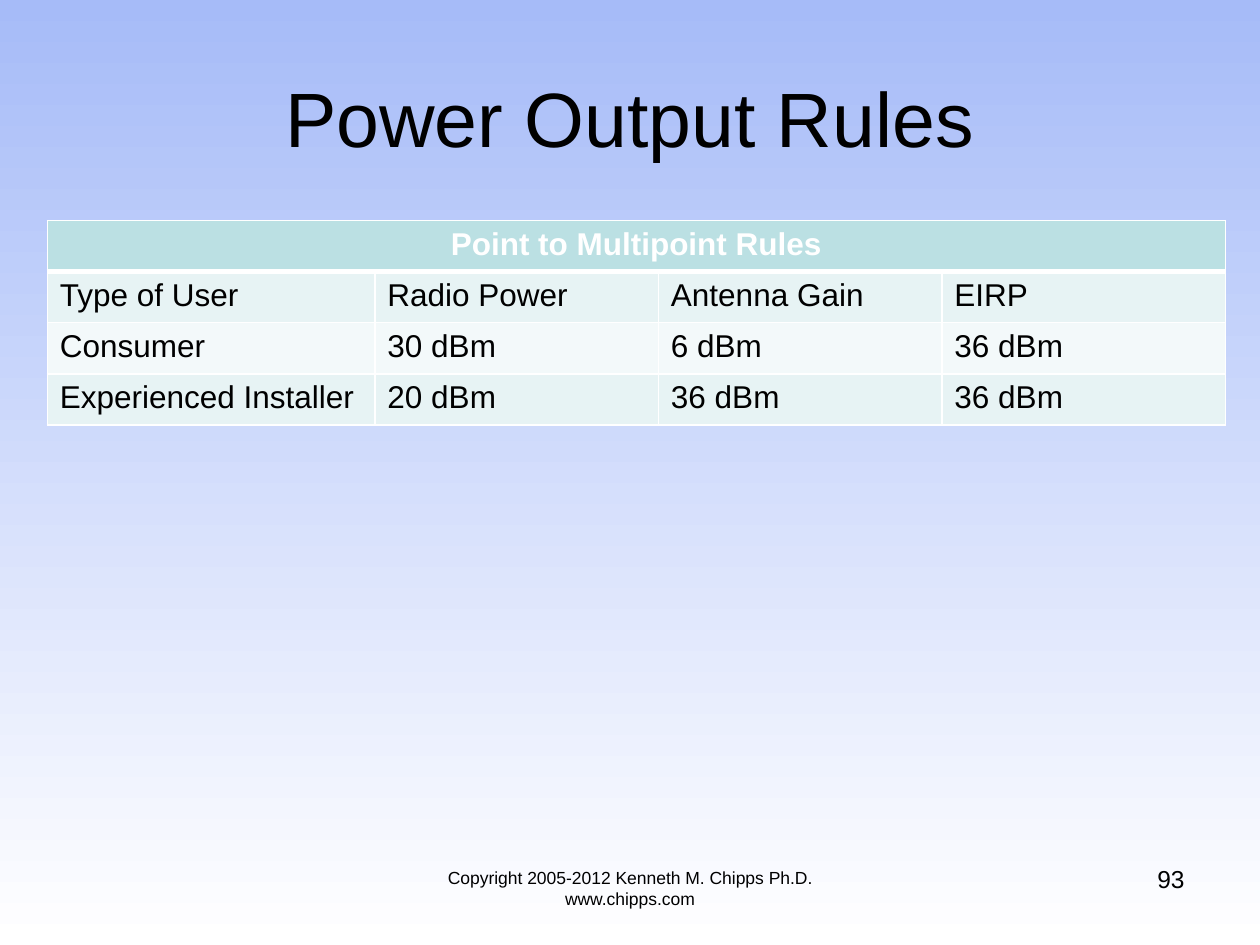
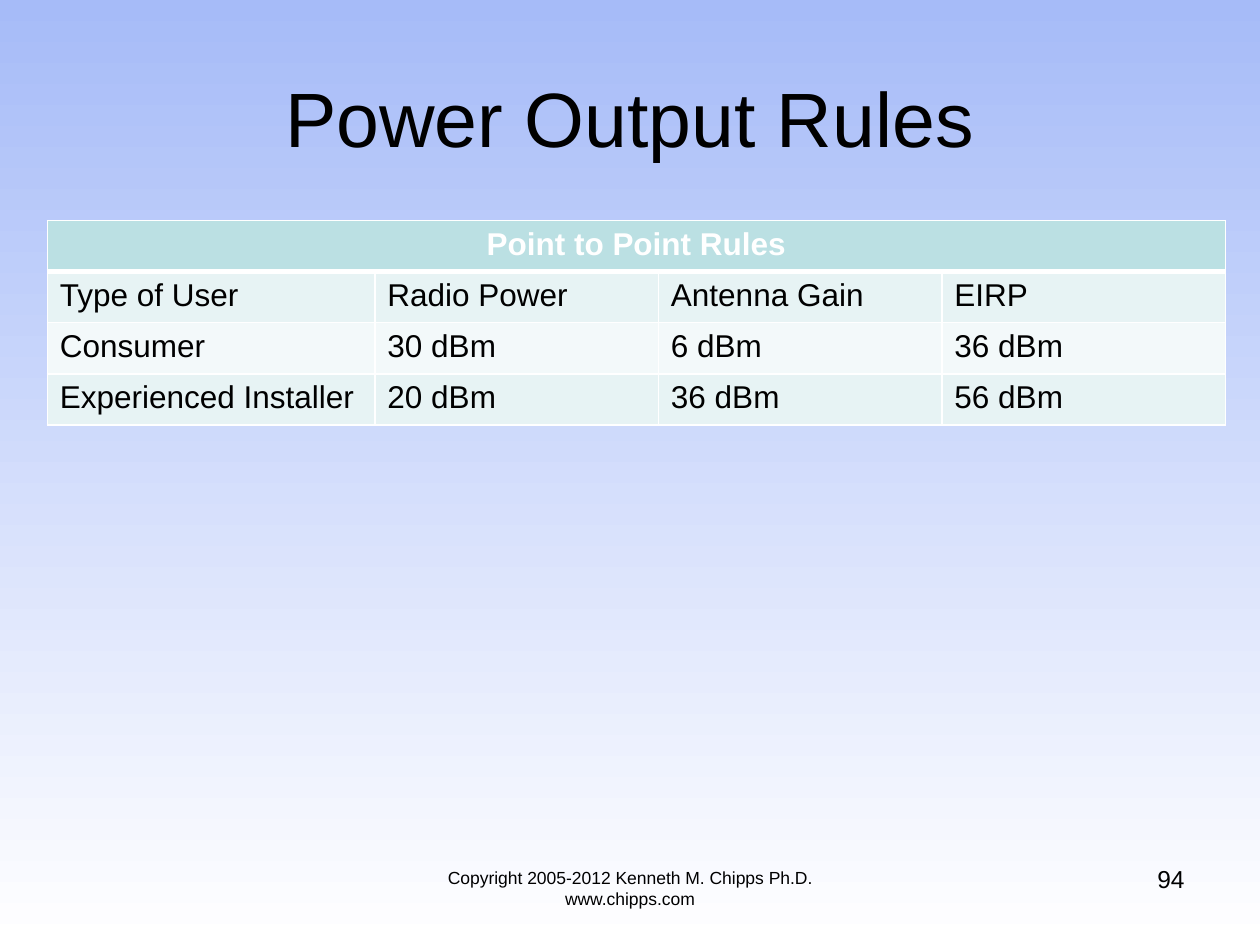
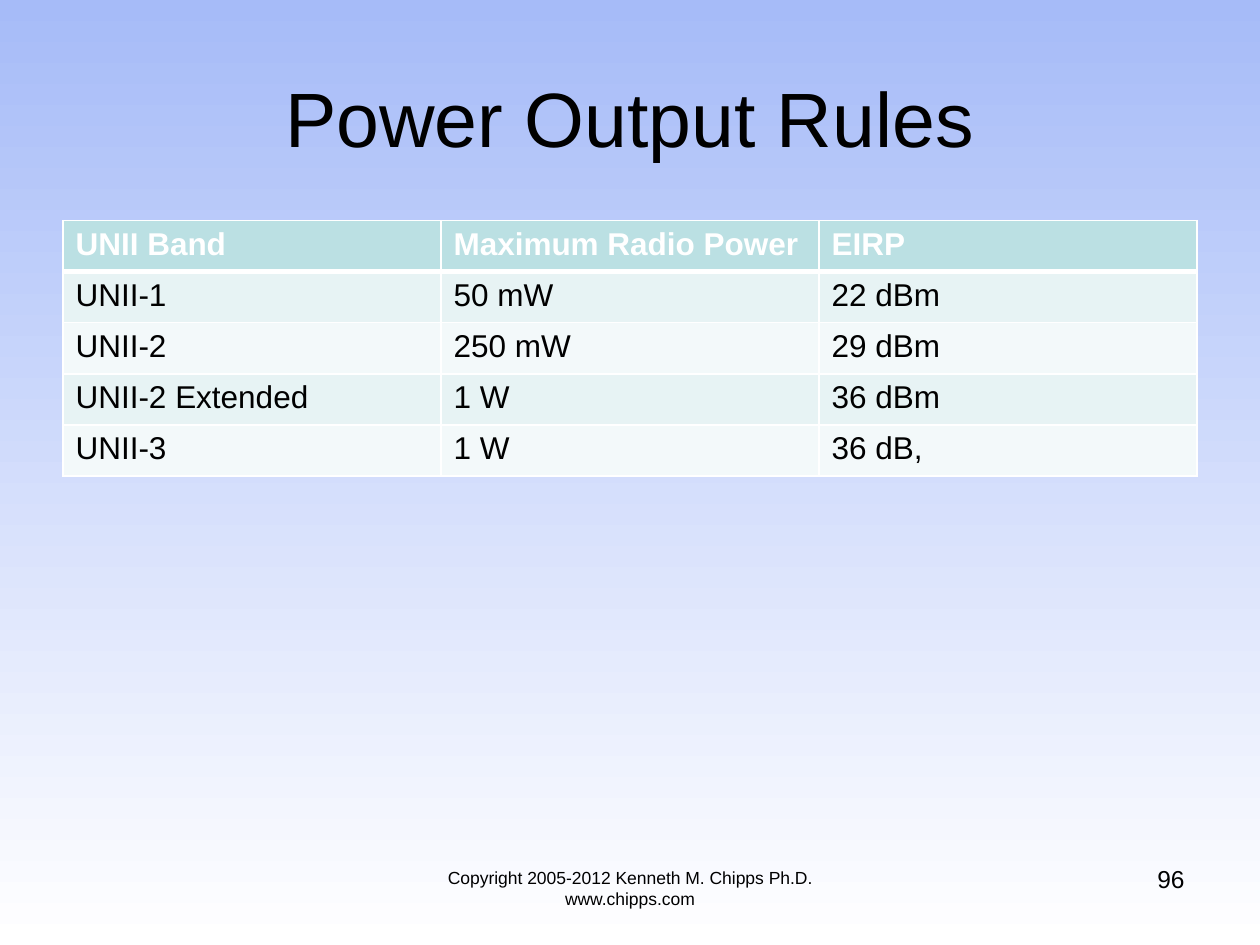
from lxml import etree
from pptx import Presentation
from pptx.dml.color import RGBColor
from pptx.enum.text import MSO_ANCHOR, PP_ALIGN
from pptx.oxml.ns import qn
from pptx.util import Pt

LEFT, CENTER, RIGHT = PP_ALIGN.LEFT, PP_ALIGN.CENTER, PP_ALIGN.RIGHT
MIDDLE = MSO_ANCHOR.MIDDLE

BLACK = RGBColor(0x00, 0x00, 0x00)
WHITE = RGBColor(0xFF, 0xFF, 0xFF)
SKY = RGBColor(0xA6, 0xBB, 0xF8)
TEAL = RGBColor(0xBB, 0xE0, 0xE3)
BANDS = [RGBColor(0xE7, 0xF3, 0xF4), RGBColor(0xF3, 0xF9, 0xFA)]

FONT = "Arial"
TITLE = "Power Output Rules"
NOTICE = "Copyright 2005-2012 Kenneth M. Chipps Ph.D. www.chipps.com"
TOP, ROW = 126, 29.2

USERS = ["Type of User", "Radio Power", "Antenna Gain", "EIRP"]
HOME = ["Consumer", "30 dBm", "6 dBm", "36 dBm"]
EXPERT = ["Experienced Installer", "20 dBm", "36 dBm"]
WIDE = [187.2, 162, 162, 162]

# Page number, table left, column widths, rows; a one-item row spans the table
PAGES = [
    (93, 27, WIDE,
     [["Point to Multipoint Rules"], USERS, HOME, EXPERT + ["36 dBm"]]),
    (94, 27, WIDE,
     [["Point to Point Rules"], USERS, HOME, EXPERT + ["56 dBm"]]),
    (96, 36, [216] * 3,
     [["UNII Band", "Maximum Radio Power", "EIRP"],
      ["UNII-1", "50 mW", "22 dBm"],
      ["UNII-2", "250 mW", "29 dBm"],
      ["UNII-2 Extended", "1 W", "36 dBm"],
      ["UNII-3", "1 W", "36 dB,"]]),
]


def write(frame, text, size, align, color=BLACK, bold=False):
    para = frame.paragraphs[0]
    para.alignment = align
    run = para.add_run()
    run.text = text
    font = run.font
    font.name, font.size, font.bold = FONT, Pt(size), bold
    font.color.rgb = color


def edge(cell, sides):
    """Draw white borders, given as side tag and width in points."""
    props = cell._tc.get_or_add_tcPr()
    for spot, (side, width) in enumerate(sides.items()):
        line = etree.Element(qn(f"a:{side}"), w=str(Pt(width)))
        fill = etree.SubElement(line, qn("a:solidFill"))
        etree.SubElement(fill, qn("a:srgbClr"), val=str(WHITE))
        props.insert(spot, line)


prs = Presentation()
prs.slide_width, prs.slide_height = Pt(720), Pt(540)

back = prs.slide_master.background.fill
back.gradient()
back.gradient_angle = 270
for stop, color, place in zip(back.gradient_stops, (SKY, WHITE), (0, 1)):
    stop.color.rgb = color
    stop.position = place

for number, left, widths, rows in PAGES:
    slide = prs.slides.add_slide(prs.slide_layouts[5])

    title = slide.shapes.title
    title.left, title.top = Pt(36), Pt(21.6)
    title.width, title.height = Pt(648), Pt(90)
    title.text_frame.vertical_anchor = MIDDLE
    write(title.text_frame, TITLE, 44, CENTER)

    table = slide.shapes.add_table(
        len(rows), len(widths), Pt(left), Pt(TOP),
        Pt(sum(widths)), Pt(ROW * len(rows))).table
    for col, width in zip(table.columns, widths):
        col.width = Pt(width)
    for r, texts in enumerate(rows):
        table.rows[r].height = Pt(ROW)
        head = r == 0
        span = len(texts) == 1
        for c in range(len(widths)):
            cell = table.cell(r, c)
            cell.fill.solid()
            cell.fill.fore_color.rgb = TEAL if head else BANDS[(r - 1) % 2]
            edge(cell, {"lnL": 1, "lnR": 1, "lnT": 3 if r == 1 else 1,
                        "lnB": 3 if head else 1})
        if span:
            table.cell(r, 0).merge(table.cell(r, len(widths) - 1))
        for c, text in enumerate(texts):
            write(table.cell(r, c).text_frame, text, 18,
                  CENTER if span else LEFT, WHITE if head else BLACK, head)

    for text, size, align, x, y, width in (
            (NOTICE, 10, CENTER, 216, 491.8, 288),
            (str(number), 14, RIGHT, 516, 490.3, 168)):
        box = slide.shapes.add_textbox(Pt(x), Pt(y), Pt(width), Pt(37.5))
        box.text_frame.word_wrap = True
        write(box.text_frame, text, size, align)

prs.save("out.pptx")
